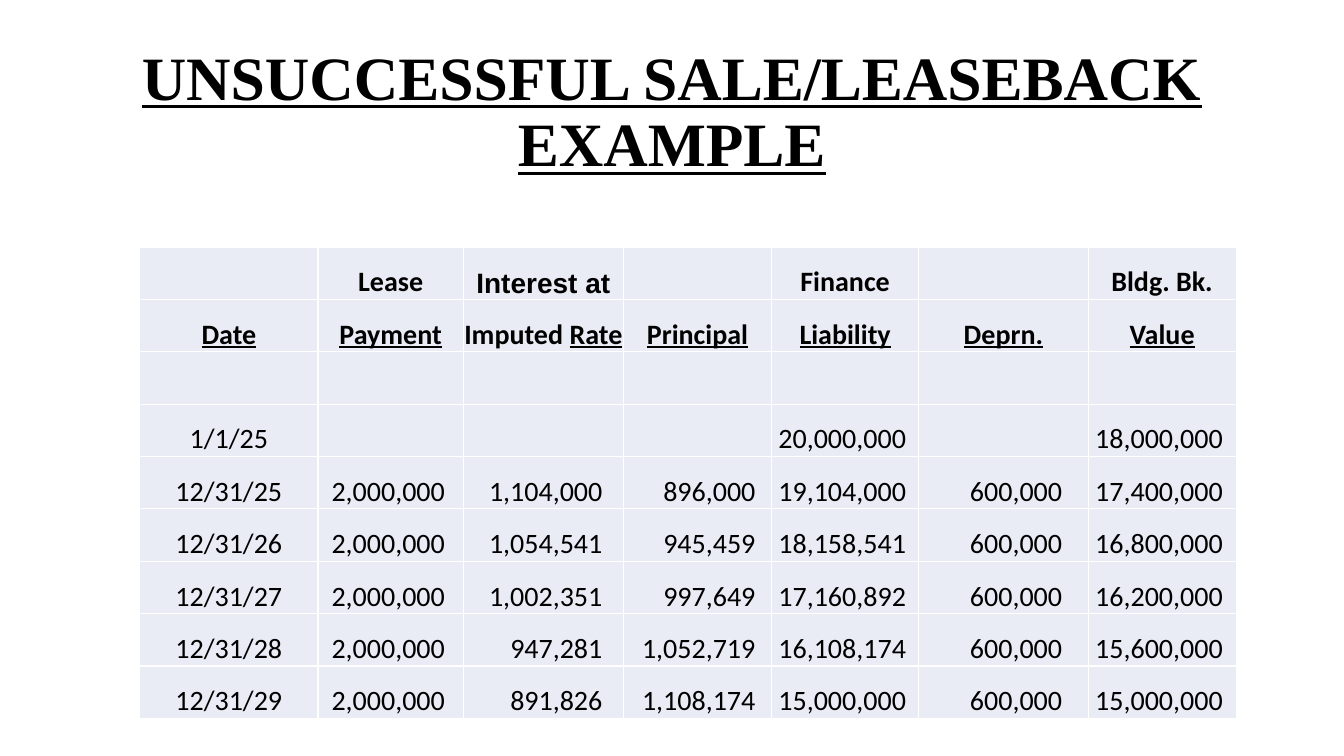
"""Build the sale and leaseback example slide."""
from lxml.etree import SubElement
from pptx import Presentation
from pptx.dml.color import RGBColor
from pptx.enum.text import MSO_ANCHOR as Anchor, MSO_AUTO_SIZE as AutoSize, PP_ALIGN as Align
from pptx.oxml.ns import qn
from pptx.util import Pt

BLACK, WHITE, CELL_FILL = "000000", "FFFFFF", "E9EBF5"
ROW_HEIGHT = 37.44
COLUMN_WIDTHS = [127.4, 103.7, 114.5, 105.8, 105.1, 121, 105.8]
NUMBER_INSETS = [0.72, 13, 15, 11.5, 9, 18.5, 9.5]
HEADINGS = [
    ["", "Lease", "Interest at", "", "Finance", "", "Bldg. Bk."],
    ["Date", "Payment", "Imputed Rate", "Principal", "Liability", "Deprn.", "Value"],
]
SCHEDULE = [
    ["1/1/25", "", "", "", "20,000,000", "", "18,000,000"],
    ["12/31/25", "2,000,000", "1,104,000", "896,000", "19,104,000", "600,000", "17,400,000"],
    ["12/31/26", "2,000,000", "1,054,541", "945,459", "18,158,541", "600,000", "16,800,000"],
    ["12/31/27", "2,000,000", "1,002,351", "997,649", "17,160,892", "600,000", "16,200,000"],
    ["12/31/28", "2,000,000", "947,281", "1,052,719", "16,108,174", "600,000", "15,600,000"],
    ["12/31/29", "2,000,000", "891,826", "1,108,174", "15,000,000", "600,000", "15,000,000"],
]


def color(value):
    """Turn a hex string into a colour."""
    return RGBColor.from_string(value)


def add_run(paragraph, text, *, size=20, font="Calibri", bold=False, underline=False):
    """Add a formatted run to a paragraph."""
    run = paragraph.add_run()
    run.text = text
    run.font.size = Pt(size)
    run.font.name = font
    run.font.bold = bold
    run.font.underline = underline
    run.font.color.rgb = color(BLACK)


def set_title(slide, text):
    """Place and format the slide title."""
    title = slide.shapes.title
    title.left, title.top, title.width, title.height = Pt(66), Pt(28.8), Pt(828), Pt(104.4)
    frame = title.text_frame
    frame.word_wrap = True
    frame.auto_size = AutoSize.NONE
    frame.vertical_anchor = Anchor.MIDDLE
    paragraph = frame.paragraphs[0]
    paragraph.alignment = Align.CENTER
    paragraph.line_spacing = 0.9
    for index, line in enumerate(text.split("\n")):
        if index:
            paragraph.add_line_break()
        add_run(paragraph, line, size=44, font="Times New Roman", bold=True, underline=True)


def set_borders(cell, value, width):
    """Draw the four borders of a cell."""
    properties = cell._tc.get_or_add_tcPr()
    for index, side in enumerate(("a:lnL", "a:lnR", "a:lnT", "a:lnB")):
        line = SubElement(properties, qn(side), w=str(Pt(width)))
        SubElement(SubElement(line, qn("a:solidFill")), qn("a:srgbClr"), val=value)
        properties.insert(index, line)


def format_cell(cell, *, right_inset=0.72):
    """Set the fill, borders, insets and anchor of a cell."""
    cell.fill.solid()
    cell.fill.fore_color.rgb = color(CELL_FILL)
    set_borders(cell, WHITE, 1)
    cell.vertical_anchor = Anchor.BOTTOM
    cell.margin_left = cell.margin_top = Pt(0.72)
    cell.margin_right, cell.margin_bottom = Pt(right_inset), Pt(0)


def fill_heading(cell, text, *, underline):
    """Write a bold, centred column heading."""
    format_cell(cell)
    paragraph = cell.text_frame.paragraphs[0]
    paragraph.alignment = Align.CENTER
    if text == "Imputed Rate":
        add_run(paragraph, "Imputed ", bold=True)
        text = "Rate"
    if text:
        font = "Arial" if text == "Interest at" else "Calibri"
        add_run(paragraph, text, font=font, bold=True, underline=underline)


def fill_entry(cell, text, column):
    """Write a centred date or a right-aligned amount."""
    format_cell(cell, right_inset=NUMBER_INSETS[column])
    paragraph = cell.text_frame.paragraphs[0]
    paragraph.alignment = Align.RIGHT if column else Align.CENTER
    if text:
        add_run(paragraph, text)


def add_schedule(slide):
    """Add the lease schedule table."""
    blank_row = [""] * len(COLUMN_WIDTHS)
    rows = HEADINGS + [blank_row] + SCHEDULE
    table = slide.shapes.add_table(
        len(rows), len(COLUMN_WIDTHS), Pt(99.8), Pt(176.4),
        Pt(sum(COLUMN_WIDTHS)), Pt(ROW_HEIGHT * len(rows))).table
    table.first_row = table.horz_banding = False
    for column, width in zip(table.columns, COLUMN_WIDTHS):
        column.width = Pt(width)
    for row_index, row in enumerate(rows):
        table.rows[row_index].height = Pt(ROW_HEIGHT)
        for column_index, text in enumerate(row):
            cell = table.cell(row_index, column_index)
            if row_index < len(HEADINGS):
                fill_heading(cell, text, underline=row_index == 1)
            else:
                fill_entry(cell, text, column_index)


def main():
    """Build and save the presentation."""
    presentation = Presentation()
    presentation.slide_width, presentation.slide_height = Pt(960), Pt(540)
    slide = presentation.slides.add_slide(presentation.slide_layouts[5])
    set_title(slide, "UNSUCCESSFUL SALE/LEASEBACK\nEXAMPLE")
    add_schedule(slide)
    presentation.save("out.pptx")


if __name__ == "__main__":
    main()
